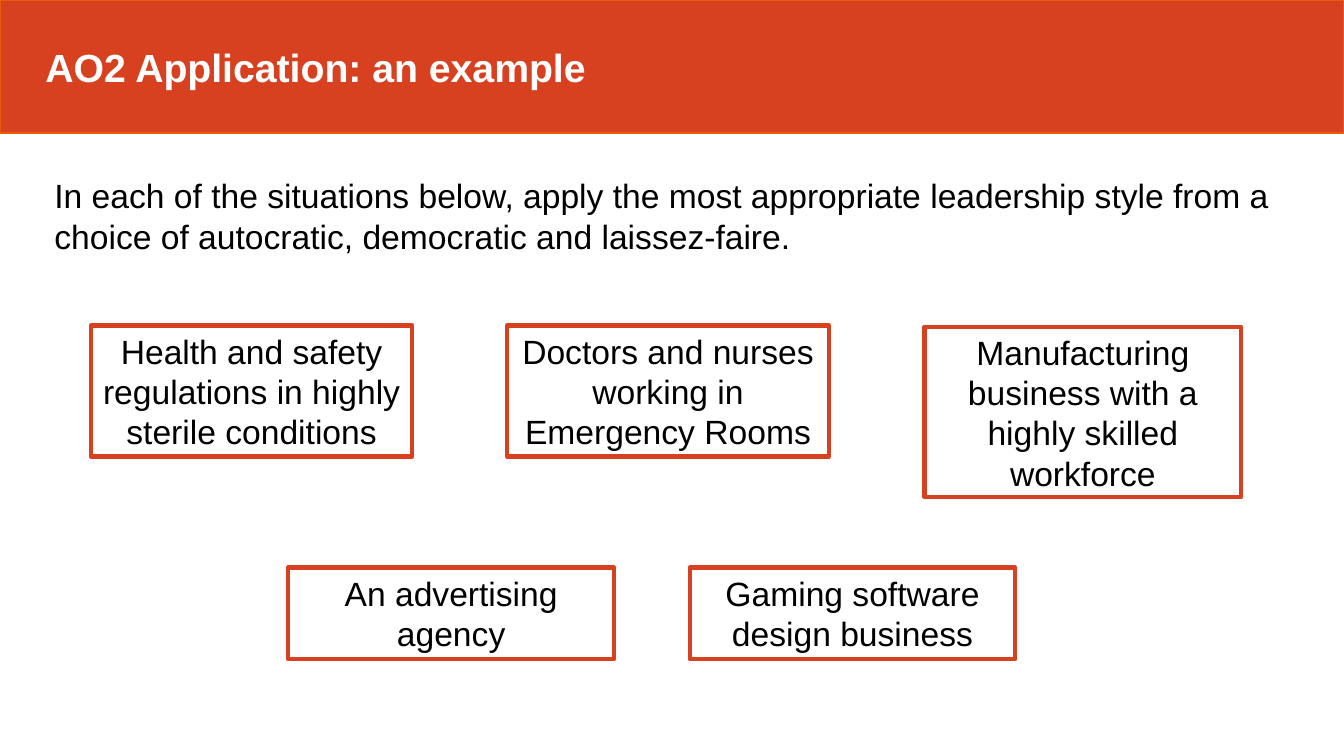
from pptx import Presentation
from pptx.dml.color import RGBColor
from pptx.enum.shapes import MSO_SHAPE as Shape
from pptx.enum.text import MSO_ANCHOR as Anchor, PP_ALIGN as Align
from pptx.util import Inches, Pt

RED = "D74120"
ORANGE = "EA5B0C"
BLACK = "000000"
WHITE = "FFFFFF"

SITUATIONS = [
    ("Health and safety regulations in highly sterile conditions", 0.9, 3.23, 3.19, 1.3),
    ("Doctors and nurses working in Emergency Rooms", 5.03, 3.23, 3.19, 1.3),
    ("Manufacturing business with a highly skilled workforce", 9.17, 3.24, 3.14, 1.69),
    ("An advertising agency", 2.86, 5.63, 3.23, 0.91),
    ("Gaming software design business", 6.84, 5.63, 3.23, 0.91),
]


def color(value):
    return RGBColor.from_string(value)


def write(shape, text, size=24, ink=BLACK, bold=False, align=Align.LEFT,
          anchor=Anchor.TOP, left_inset=0.05):
    frame = shape.text_frame
    frame.word_wrap = True
    frame.vertical_anchor = anchor
    frame.margin_left = Inches(left_inset)
    frame.margin_top = frame.margin_right = frame.margin_bottom = Inches(0.05)
    para = frame.paragraphs[0]
    para.alignment = align
    span = para.add_run()
    span.text = text
    span.font.name = "Arial"
    span.font.size = Pt(size)
    span.font.bold = bold
    span.font.color.rgb = color(ink)


def add_box(page, left, top, width, height, line, line_width, fill=None):
    box = page.shapes.add_shape(
        Shape.RECTANGLE, Inches(left), Inches(top), Inches(width), Inches(height))
    box.shadow.inherit = False
    if fill:
        box.fill.solid()
        box.fill.fore_color.rgb = color(fill)
    else:
        box.fill.background()
    box.line.color.rgb = color(line)
    box.line.width = Pt(line_width)
    return box


def add_heading(page, text):
    banner = add_box(page, 0, 0, 13.33, 1.32, ORANGE, 1, fill=RED)
    title = page.shapes.title
    title.left, title.top = Inches(0), Inches(0.4)
    title.width, title.height = Inches(13.33), Inches(0.53)
    write(title, text, size=28, ink=WHITE, bold=True, anchor=Anchor.MIDDLE, left_inset=0.45)
    title.element.addprevious(banner.element)


def add_instruction(page, text):
    box = page.shapes.add_textbox(Inches(0.49), Inches(1.69), Inches(12.6), Inches(0.91))
    write(box, text)


def main():
    deck = Presentation()
    deck.slide_width, deck.slide_height = Inches(13.33), Inches(7.5)
    page = deck.slides.add_slide(deck.slide_layouts.get_by_name("Title Only"))
    add_heading(page, "AO2 Application: an example")
    add_instruction(
        page,
        "In each of the situations below, apply the most appropriate leadership style "
        "from a choice of autocratic, democratic and laissez-faire.")
    for text, left, top, width, height in SITUATIONS:
        box = add_box(page, left, top, width, height, RED, 3)
        write(box, text, align=Align.CENTER)
    deck.save("out.pptx")


if __name__ == "__main__":
    main()
